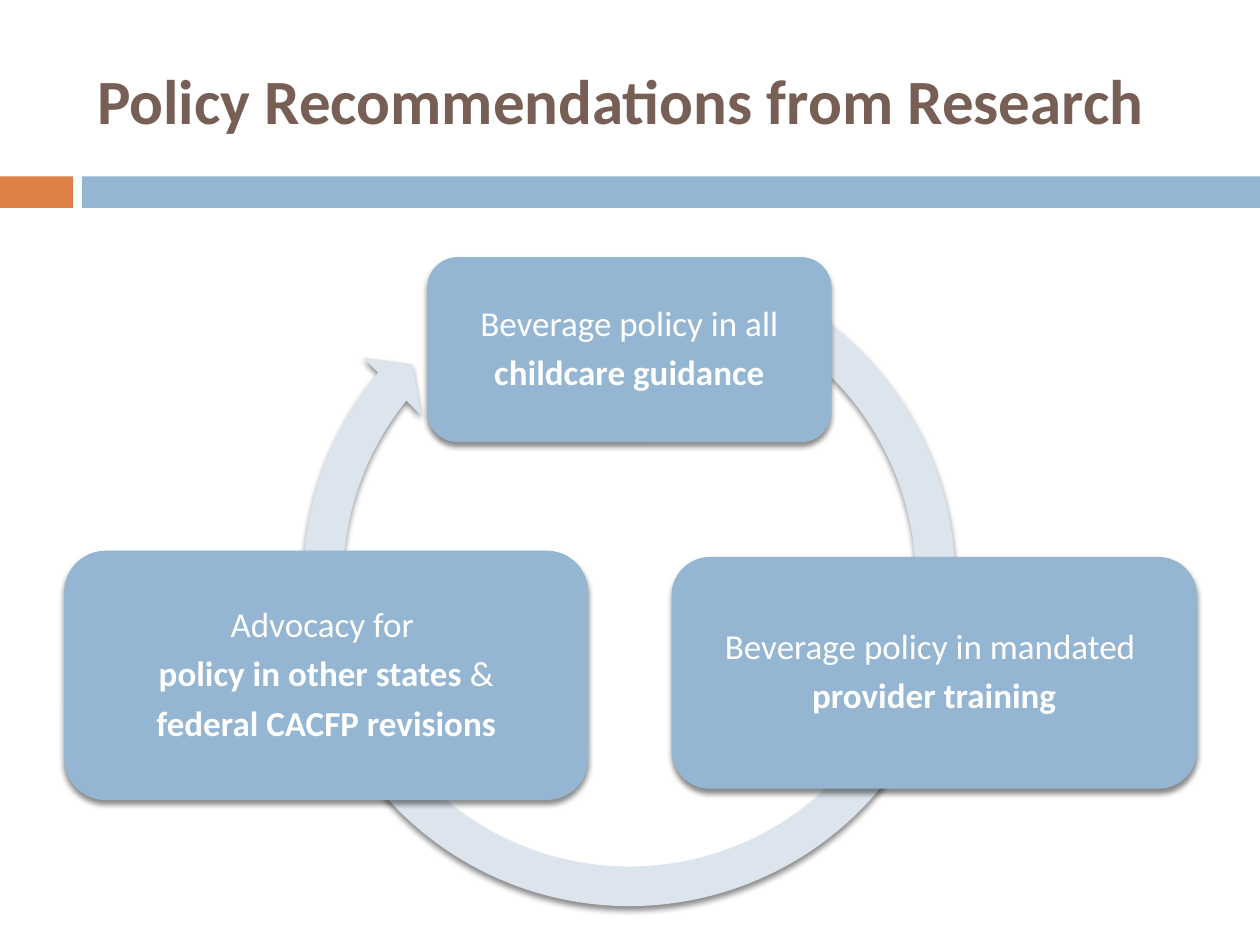
from lxml import etree
from pptx import Presentation, util as u
from pptx.dml.color import RGBColor
from pptx.enum import shapes, text
from pptx.oxml.ns import qn

TITLE = "Policy Recommendations from Research"
BARS = [((0, 1.4, 0.58, 0.25), "DD8047"), ((0.65, 1.4, 9.35, 0.25), "94B6D2")]
CYCLE = (2.24, 1.85, 5.51, 5.51)
CYCLE_ADJUSTMENTS = (0.057, 3.405, 131.544, 177.705, 0.059)
STEPS = [
    ((3.39, 2.04, 3.21, 1.47),
     [[("Beverage policy in all", False)],
      [(" ", False), ("childcare guidance ", True)]]),
    ((5.33, 4.42, 4.17, 1.84),
     [[("Beverage policy in mandated ", False)],
      [("provider training", True)]]),
    ((0.51, 4.37, 4.16, 1.98),
     [[("Advocacy for ", False)],
      [("policy in other states", True), (" &", False)],
      [("federal CACFP revisions", True)]]),
]


def color(value):
    return RGBColor.from_string(value)


def add_box(slide, kind, place, fill):
    box = slide.shapes.add_shape(kind, *map(u.Inches, place))
    box.fill.solid()
    box.fill.fore_color.rgb = color(fill)
    box.line.fill.background()
    box.shadow.inherit = False
    return box


def add_shadow(box):
    effects = box.element.spPr.find(qn("a:effectLst"))
    shadow = etree.SubElement(
        effects, qn("a:outerShdw"), blurRad=str(u.Pt(3)), dist=str(u.Pt(2.4)),
        dir="5400000", algn="ctr", rotWithShape="0")
    tint = etree.SubElement(shadow, qn("a:srgbClr"), val="000000")
    etree.SubElement(tint, qn("a:alpha"), val="45000")


def add_span(para, words, size, fill, bold):
    span = para.add_run()
    span.text = words
    span.font.name = "Calibri"
    span.font.size = u.Pt(size)
    span.font.bold = bold
    span.font.color.rgb = color(fill)


def add_step(slide, place, lines):
    box = add_box(slide, shapes.MSO_SHAPE.ROUNDED_RECTANGLE, place, "94B6D2")
    add_shadow(box)
    frame = box.text_frame
    frame.word_wrap = True
    frame.vertical_anchor = text.MSO_ANCHOR.MIDDLE
    frame.margin_left = frame.margin_right = u.Inches(0.08)
    frame.margin_top = frame.margin_bottom = u.Inches(0.08)
    for index, line in enumerate(lines):
        para = frame.add_paragraph() if index else frame.paragraphs[0]
        para.alignment = text.PP_ALIGN.CENTER
        para.line_spacing = 0.9
        para.space_after = u.Pt(6.6)
        for words, bold in line:
            add_span(para, words, 20, "FFFFFF", bold)


def add_title(slide):
    title = slide.shapes.title
    title.left, title.top, title.width, title.height = map(
        u.Inches, (0.67, 0.25, 8.92, 1.08))
    title.text_frame.vertical_anchor = text.MSO_ANCHOR.MIDDLE
    para = title.text_frame.paragraphs[0]
    para.alignment = text.PP_ALIGN.LEFT
    add_span(para, TITLE, 36, "775F55", True)


def main():
    """Build the policy recommendations slide."""
    deck = Presentation()
    deck.slide_width, deck.slide_height = u.Inches(10), u.Inches(7.5)
    slide = deck.slides.add_slide(deck.slide_layouts[5])
    add_title(slide)
    for place, fill in BARS:
        add_box(slide, shapes.MSO_SHAPE.RECTANGLE, place, fill)
    cycle = add_box(slide, shapes.MSO_SHAPE.CIRCULAR_ARROW, CYCLE, "DCE5EE")
    for index, value in enumerate(CYCLE_ADJUSTMENTS):
        cycle.adjustments[index] = value
    add_shadow(cycle)
    for place, lines in STEPS:
        add_step(slide, place, lines)
    deck.save("out.pptx")


if __name__ == "__main__":
    main()
